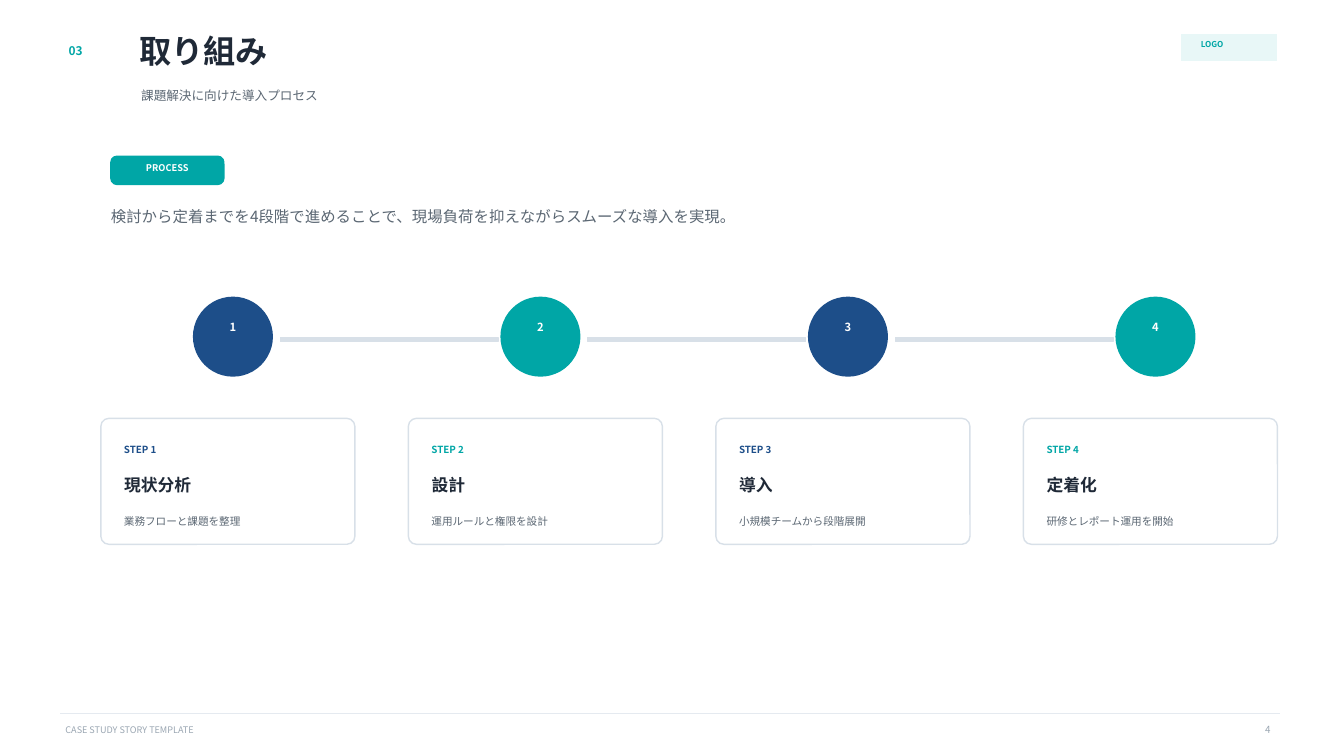
from lxml import etree
from pptx import Presentation
from pptx import util as u
from pptx.dml.color import RGBColor
from pptx.enum import shapes, text
from pptx.oxml.ns import qn

FONT = "Noto Sans CJK JP"
COLORS = {
    "teal": "00A6A6", "navy": "1D4E89", "ink": "1F2937", "gray": "5B6773",
    "muted": "9AA6B2", "border": "D8E0E8", "rule": "E5EAF0",
    "pale": "E8F7F7", "white": "FFFFFF",
}
SHAPE = shapes.MSO_SHAPE

presentation = Presentation()
presentation.slide_width = u.Inches(13.33)
presentation.slide_height = u.Inches(7.5)
slide = presentation.slides.add_slide(presentation.slide_layouts[6])


def add_label(wording, left, top, width, height, size, color, bold=False, centered=False):
    box = slide.shapes.add_textbox(*map(u.Inches, (left, top, width, height)))
    frame = box.text_frame
    frame.word_wrap = True
    frame.vertical_anchor = text.MSO_ANCHOR.MIDDLE
    frame.margin_left = frame.margin_right = frame.margin_top = frame.margin_bottom = 0
    frame.text = wording
    paragraph = frame.paragraphs[0]
    if centered:
        paragraph.alignment = text.PP_ALIGN.CENTER
    run = paragraph.runs[0]
    run.font.size = u.Pt(size)
    run.font.bold = bold
    run.font.name = FONT
    run.font.color.rgb = RGBColor.from_string(COLORS[color])
    etree.SubElement(run.font._element, qn("a:ea"), typeface=FONT)
    return frame


def add_block(kind, left, top, width, height, fill, line, radius=None):
    shape = slide.shapes.add_shape(kind, *map(u.Inches, (left, top, width, height)))
    shape.shadow.inherit = False
    shape.fill.solid()
    shape.fill.fore_color.rgb = RGBColor.from_string(COLORS[fill])
    shape.line.color.rgb = RGBColor.from_string(COLORS[line])
    shape.line.width = u.Pt(1)
    if radius is not None:
        shape.adjustments[0] = radius / min(width, height)


# Footer
rule = slide.shapes.add_connector(
    shapes.MSO_CONNECTOR.STRAIGHT, *map(u.Inches, (0.6, 7.08, 12.7, 7.08)))
rule.line.color.rgb = RGBColor.from_string(COLORS["rule"])
rule.line.width = u.Pt(0.8)
etree.SubElement(rule._element.spPr, qn("a:effectLst"))
add_label("CASE STUDY STORY TEMPLATE", 0.65, 7.16, 4, 0.16, 6.5, "muted")
page_number = add_label("4", 12.45, 7.13, 0.87, 0.33, 7, "muted")
page_number.vertical_anchor = text.MSO_ANCHOR.TOP
page_number.margin_left = u.Inches(0.1)
page_number.margin_top = u.Inches(0.05)

# Header
add_label("03", 0.68, 0.36, 0.32, 0.28, 8.5, "teal", bold=True)
add_label("取り組み", 1.38, 0.28, 7.45, 0.45, 23, "ink", bold=True)
add_label("課題解決に向けた導入プロセス", 1.4, 0.8, 7.45, 0.3, 9, "gray")
add_block(SHAPE.RECTANGLE, 11.72, 0.34, 0.94, 0.26, "pale", "pale")
add_label("LOGO", 11.91, 0.38, 0.58, 0.12, 5.8, "teal", bold=True)

# Introduction
add_block(SHAPE.ROUNDED_RECTANGLE, 1.1, 1.55, 1.12, 0.28, "teal", "teal", radius=0.06)
add_label("PROCESS", 1.18, 1.6, 0.96, 0.13, 6.6, "white", bold=True, centered=True)
add_label("検討から定着までを4段階で進めることで、現場負荷を抑えながらスムーズな導入を実現。",
          1.1, 1.98, 8.3, 0.33, 11, "gray")

# Four steps, one per column
steps = [
    ("現状分析", "業務フローと課題を整理"),
    ("設計", "運用ルールと権限を設計"),
    ("導入", "小規模チームから段階展開"),
    ("定着化", "研修とレポート運用を開始"),
]
FIRST_COLUMN, COLUMN_PITCH = 1, 3.05

for index, (title, description) in enumerate(steps):
    number = index + 1
    left = FIRST_COLUMN + index * COLUMN_PITCH
    inner = left + 0.23
    accent = ("navy", "teal")[index % 2]

    # Bar to the next step
    if number < len(steps):
        add_block(SHAPE.RECTANGLE, left + 1.78, 3.35, 2.16, 0.04, "border", "border")

    # Numbered circle
    add_block(SHAPE.OVAL, left + 0.92, 2.95, 0.78, 0.78, accent, accent)
    add_label(str(number), left + 1.05, 3.17, 0.52, 0.14, 8, "white", bold=True, centered=True)

    # Card
    add_block(SHAPE.ROUNDED_RECTANGLE, left, 4.15, 2.52, 1.25, "white", "border", radius=0.08)
    add_label(f"STEP {number}", inner, 4.37, 0.8, 0.18, 7, accent, bold=True)
    add_label(title, inner, 4.68, 1.85, 0.25, 12, "ink", bold=True)
    add_label(description, inner, 5.06, 2, 0.22, 7.6, "gray")

presentation.save("out.pptx")
